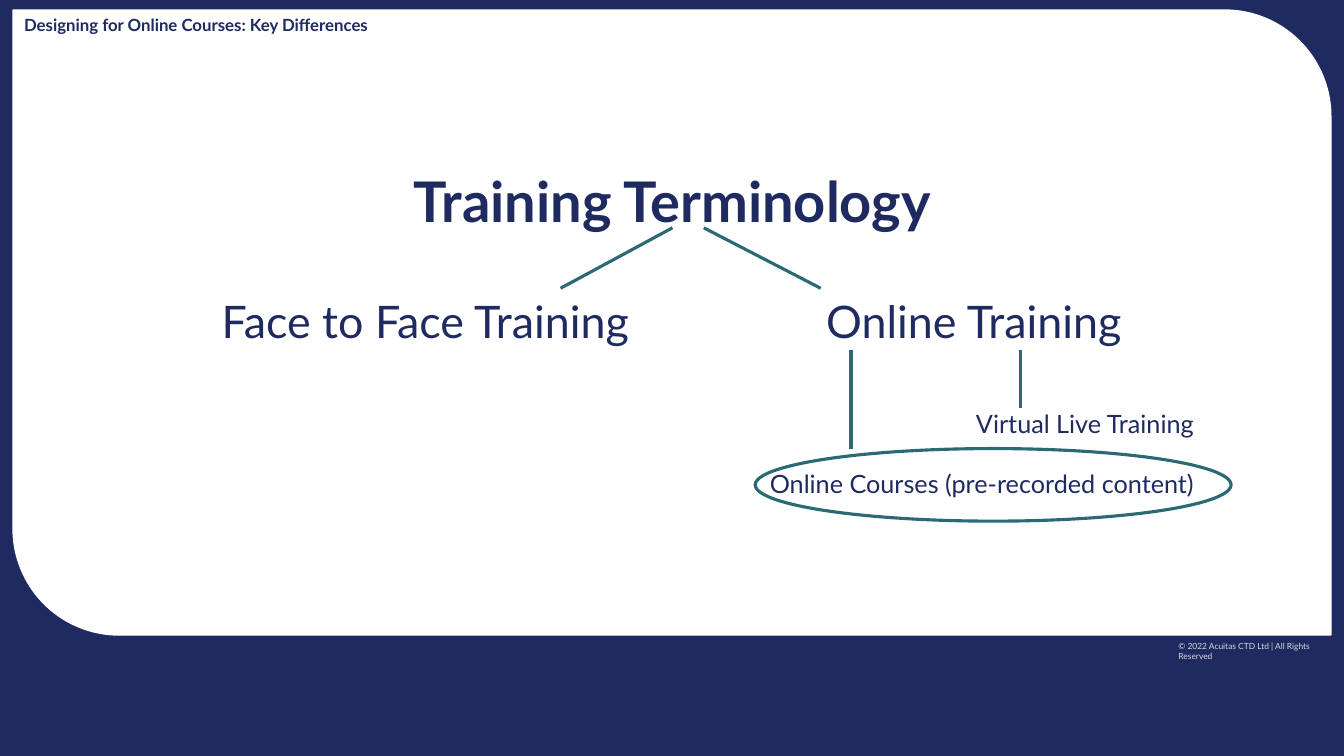
from lxml import etree
from pptx import Presentation
from pptx import util as u
from pptx.dml.color import RGBColor
from pptx.enum import shapes, text
from pptx.oxml import ns

COLORS = {"navy": "1F2A61", "white": "FFFFFF", "teal": "2B6A75", "gray": "D9D9D9"}
LEFT, CENTER, RIGHT = text.PP_ALIGN.LEFT, text.PP_ALIGN.CENTER, text.PP_ALIGN.RIGHT
TOP, MIDDLE = text.MSO_ANCHOR.TOP, text.MSO_ANCHOR.MIDDLE


class SlideBuilder:
    def __init__(self, slide, font="Lato", line_width=2.25):
        self.slide = slide
        self.font = font
        self.line_width = line_width

    def color(self, name):
        return RGBColor.from_string(COLORS[name])

    def background(self, color):
        fill = self.slide.background.fill
        fill.solid()
        fill.fore_color.rgb = self.color(color)

    def shape(self, kind, box, fill=None, line="teal", width=None):
        shape = self.slide.shapes.add_shape(kind, *map(u.Inches, box))
        shape.shadow.inherit = False
        if fill:
            shape.fill.solid()
            shape.fill.fore_color.rgb = self.color(fill)
        else:
            shape.fill.background()
        shape.line.color.rgb = self.color(line)
        shape.line.width = u.Pt(width or self.line_width)
        return shape

    def set_text(self, shape, words, size, color="navy", bold=False, align=LEFT, anchor=MIDDLE):
        frame = shape.text_frame
        frame.word_wrap = True
        frame.auto_size = text.MSO_AUTO_SIZE.NONE
        frame.vertical_anchor = anchor
        paragraph = frame.paragraphs[0]
        paragraph.alignment = align
        paragraph.line_spacing = 1.0
        run = paragraph.add_run()
        run.text = words
        run.font.name = self.font
        run.font.size = u.Pt(size)
        run.font.bold = bold
        run.font.color.rgb = self.color(color)

    def title(self, words, box, size):
        shape = self.slide.shapes.title
        shape.left, shape.top, shape.width, shape.height = map(u.Inches, box)
        self.set_text(shape, words, size, bold=True, align=CENTER)

    def label(self, words, box, size, **style):
        shape = self.slide.shapes.add_textbox(*map(u.Inches, box))
        self.set_text(shape, words, size, **style)

    def branch(self, start, end):
        connector = self.slide.shapes.add_connector(
            shapes.MSO_CONNECTOR.STRAIGHT, *map(u.Inches, start + end))
        connector.line.color.rgb = self.color("teal")
        connector.line.width = u.Pt(self.line_width)
        etree.SubElement(connector._element.spPr, ns.qn("a:effectLst"))


def main():
    presentation = Presentation()
    presentation.slide_width = u.Inches(13.33)
    presentation.slide_height = u.Inches(7.5)
    slide = presentation.slides.add_slide(presentation.slide_layouts[5])
    builder = SlideBuilder(slide)

    # Navy background and white panel, rounded top right and bottom left
    builder.background("navy")
    panel = builder.shape(shapes.MSO_SHAPE.ROUND_2_DIAG_RECTANGLE,
                          (0.13, 0.1, 13.07, 6.2), fill="white", line="white", width=1)
    panel.adjustments[0] = 0
    panel.adjustments[1] = 0.17
    # The title belongs in front of the panel
    slide.shapes._spTree.append(slide.shapes.title._element)

    # Header and copyright line
    builder.label("Designing for Online Courses: Key Differences",
                  (0.14, 0.1, 7.35, 0.3), 12, bold=True, anchor=TOP)
    builder.label("© 2022 Acuitas CTD Ltd | All Rights Reserved",
                  (11.59, 6.31, 1.74, 0.3), 6, color="gray", anchor=TOP)

    # Terminology tree
    builder.title("Training Terminology", (1.4, 1.6, 10.54, 0.77), 40)
    for words, middle in (("Face to Face Training", 4.22), ("Online Training", 9.66)):
        builder.label(words, (middle - 2.4, 2.85, 4.8, 0.66), 32, align=CENTER)
    for words, top in (("Virtual Live Training", 4.0), ("Online Courses (pre-recorded content)", 4.6)):
        builder.label(words, (6.94, top, 5, 0.4), 18, align=RIGHT)

    # Branches between the levels
    for start, end in (((6.67, 2.26), (5.56, 2.86)),
                       ((6.98, 2.26), (8.14, 2.86)),
                       ((8.44, 3.47), (8.44, 4.45)),
                       ((10.12, 3.47), (10.12, 4.05))):
        builder.branch(start, end)

    # Highlight around online courses
    builder.shape(shapes.MSO_SHAPE.OVAL, (7.49, 4.45, 4.72, 0.72))

    presentation.save("out.pptx")


if __name__ == "__main__":
    main()
